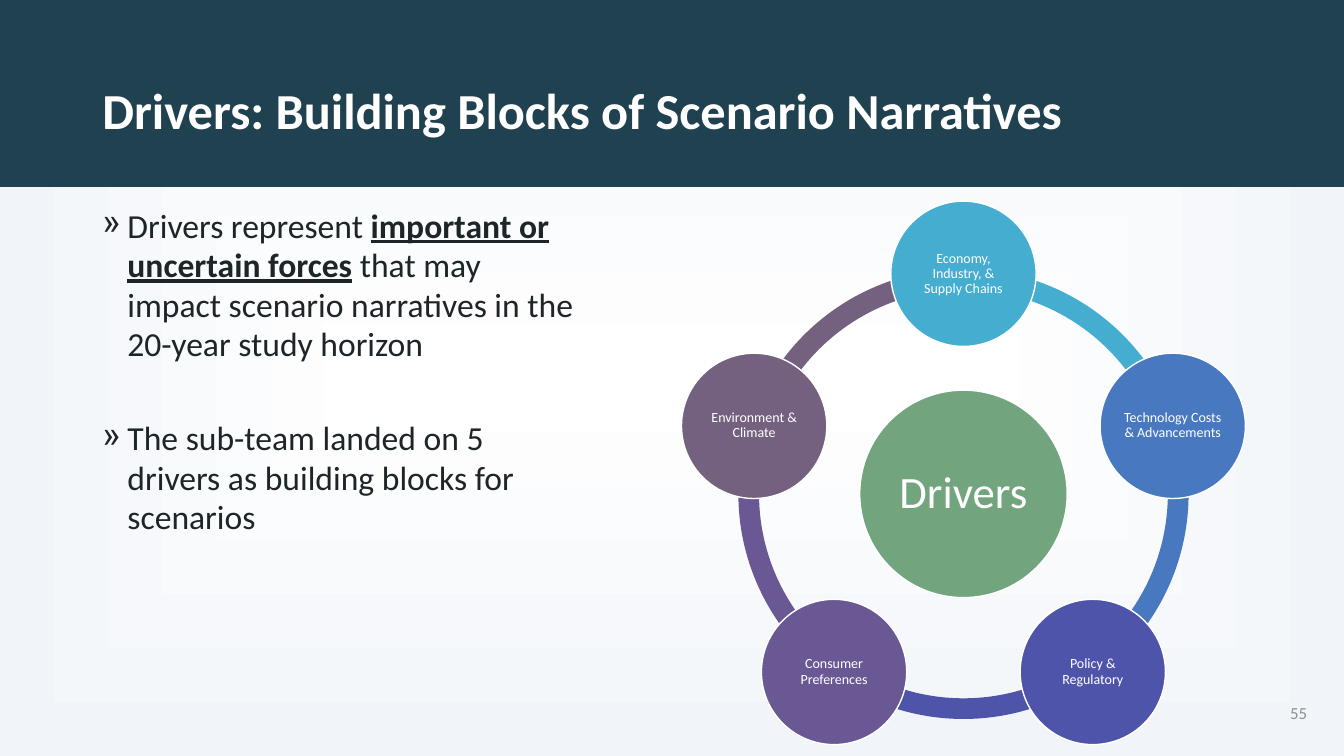
from math import cos, radians, sin

from lxml.etree import SubElement
from pptx import Presentation
from pptx.dml.color import RGBColor
from pptx.enum.shapes import MSO_SHAPE as SHAPE
from pptx.enum.text import MSO_ANCHOR as ANCHOR, PP_ALIGN as ALIGN
from pptx.oxml.ns import qn
from pptx.util import Inches, Pt

COLS, ROWS = 16, 9  # square grid cells
WIDTH, HEIGHT = Inches(13.333), Inches(7.5)
WHITE, PALE, NAVY, INK, GREY, GREEN = (
    "FFFFFF", "F1F5F9", "204150", "1D2528", "8D8E8E", "72A57E")
DRIVERS = [  # clockwise from the top
    ("Economy, Industry, & Supply Chains", "44ADD0"),
    ("Technology Costs & Advancements", "4878BF"),
    ("Policy & Regulatory", "4F54AB"),
    ("Consumer Preferences", "6A5894"),
    ("Environment & Climate", "74607F"),
]
BULLETS = [
    [("Drivers represent ", False), ("important or uncertain forces", True),
     (" that may impact scenario narratives in the 20-year study horizon", False)],
    [("The sub-team landed on 5 drivers as building blocks for scenarios", False)],
]


def rgb(value):
    return RGBColor.from_string(value)


class Deck:
    """Holds the style and the current slide; lengths are grid cells."""
    font = "Calibri"

    def __init__(self):
        self.prs = Presentation()
        self.prs.slide_width, self.prs.slide_height = WIDTH, HEIGHT
        self.s = self.prs.slides.add_slide(self.prs.slide_layouts[6])

    def box(self, x, y, w, h):
        return [int(x * WIDTH / COLS), int(y * HEIGHT / ROWS),
                int(w * WIDTH / COLS), int(h * HEIGHT / ROWS)]

    def background(self, centre, edge):
        fill = self.s.background.fill
        fill.gradient()
        for stop, color, place in zip(fill.gradient_stops, (centre, edge), (0, 1)):
            stop.color.rgb = rgb(color)
            stop.position = place
        # Rectangular gradient spreading from the middle
        for lin in list(self.s.element.iter(qn("a:lin"))):
            grad = lin.getparent()
            grad.remove(lin)
            rect = SubElement(grad, qn("a:path"), {"path": "rect"})
            SubElement(rect, qn("a:fillToRect"), dict.fromkeys("ltrb", "50000"))

    def style(self, run, size, color, bold=False, underline=False):
        f = run.font
        f.name, f.size, f.bold, f.underline = self.font, Pt(size), bold, underline
        f.color.rgb = rgb(color)

    def shape(self, kind, x, y, w, h, fill, line=None):
        sp = self.s.shapes.add_shape(kind, *self.box(x, y, w, h))
        sp.shadow.inherit = False
        sp.fill.solid()
        sp.fill.fore_color.rgb = rgb(fill)
        if line:
            sp.line.color.rgb = rgb(line)
            sp.line.width = Pt(1)
        else:
            sp.line.fill.background()
        return sp

    def circle(self, cx, cy, d, fill, text, size, inset):
        sp = self.shape(SHAPE.OVAL, cx - d / 2, cy - d / 2, d, d, fill, WHITE)
        tf = sp.text_frame
        tf.word_wrap, tf.vertical_anchor = True, ANCHOR.MIDDLE
        tf.margin_left = tf.margin_right = Inches(inset)
        tf.margin_top = tf.margin_bottom = Inches(inset)
        self.fill_text(tf, text, size, WHITE, align=ALIGN.CENTER)

    def arc(self, cx, cy, d, start, end, fill):
        sp = self.shape(SHAPE.BLOCK_ARC, cx - d / 2, cy - d / 2, d, d, fill)
        # Adjustments count 60000ths of a degree, divided by 100000
        for i, value in enumerate((start % 360 * 0.6, end % 360 * 0.6, 0.046)):
            sp.adjustments[i] = value

    def fill_text(self, tf, text, size, color, bold=False, align=ALIGN.LEFT):
        tf.text = text
        p = tf.paragraphs[0]
        p.alignment, p.line_spacing = align, 0.9
        self.style(p.runs[0], size, color, bold)

    def frame(self, x, y, w, h, anchor=ANCHOR.TOP):
        tf = self.s.shapes.add_textbox(*self.box(x, y, w, h)).text_frame
        tf.word_wrap, tf.vertical_anchor = True, anchor
        return tf

    def label(self, x, y, w, h, *text_style, **options):
        self.fill_text(self.frame(x, y, w, h, ANCHOR.MIDDLE), *text_style, **options)

    def bullets(self, x, y, w, h, items, size, color, gap):
        tf = self.frame(x, y, w, h)
        for i, parts in enumerate(items):
            p = tf.add_paragraph() if i else tf.paragraphs[0]
            p.line_spacing = 0.98
            p.space_before = Pt(gap if i else 0)
            indent = Inches(0.25)
            props = p._p.get_or_add_pPr()
            props.set("marL", str(indent))
            props.set("indent", str(-indent))
            SubElement(props, qn("a:buChar"), char="»")
            for text, strong in parts:
                r = p.add_run()
                r.text = text
                self.style(r, size, color, strong, strong)


def main():
    deck = Deck()
    deck.background(WHITE, PALE)

    # Title banner
    deck.shape(SHAPE.RECTANGLE, 0, 0, COLS, 2.22, NAVY, NAVY)
    deck.label(1.1, 0.48, 13.8, 1.74, "Drivers: Building Blocks of Scenario Narratives",
               36, WHITE, bold=True)

    # Explanation and slide number
    deck.bullets(1.1, 2.4, 5.9, 5.71, BULLETS, 24, INK, gap=39)
    deck.label(14.94, 8.26, 0.74, 0.48, "55", 12, GREY, align=ALIGN.RIGHT)

    # Ring of drivers: each arc runs from its driver to the next one
    cx, cy, radius = 11.47, 5.88, 2.62
    step = 360 / len(DRIVERS)
    ring = [(270 + i * step, *driver) for i, driver in enumerate(DRIVERS)]
    for angle, _, color in reversed(ring):
        deck.arc(cx, cy, 5.36, angle, angle + step, color)
    deck.circle(cx, cy, 2.47, GREEN, "Drivers", 32, inset=0.04)
    for angle, name, color in ring:
        turn = radians(angle)
        deck.circle(cx + radius * cos(turn), cy + radius * sin(turn), 1.73,
                    color, name, 10, inset=0.01)

    deck.prs.save("out.pptx")


if __name__ == "__main__":
    main()
